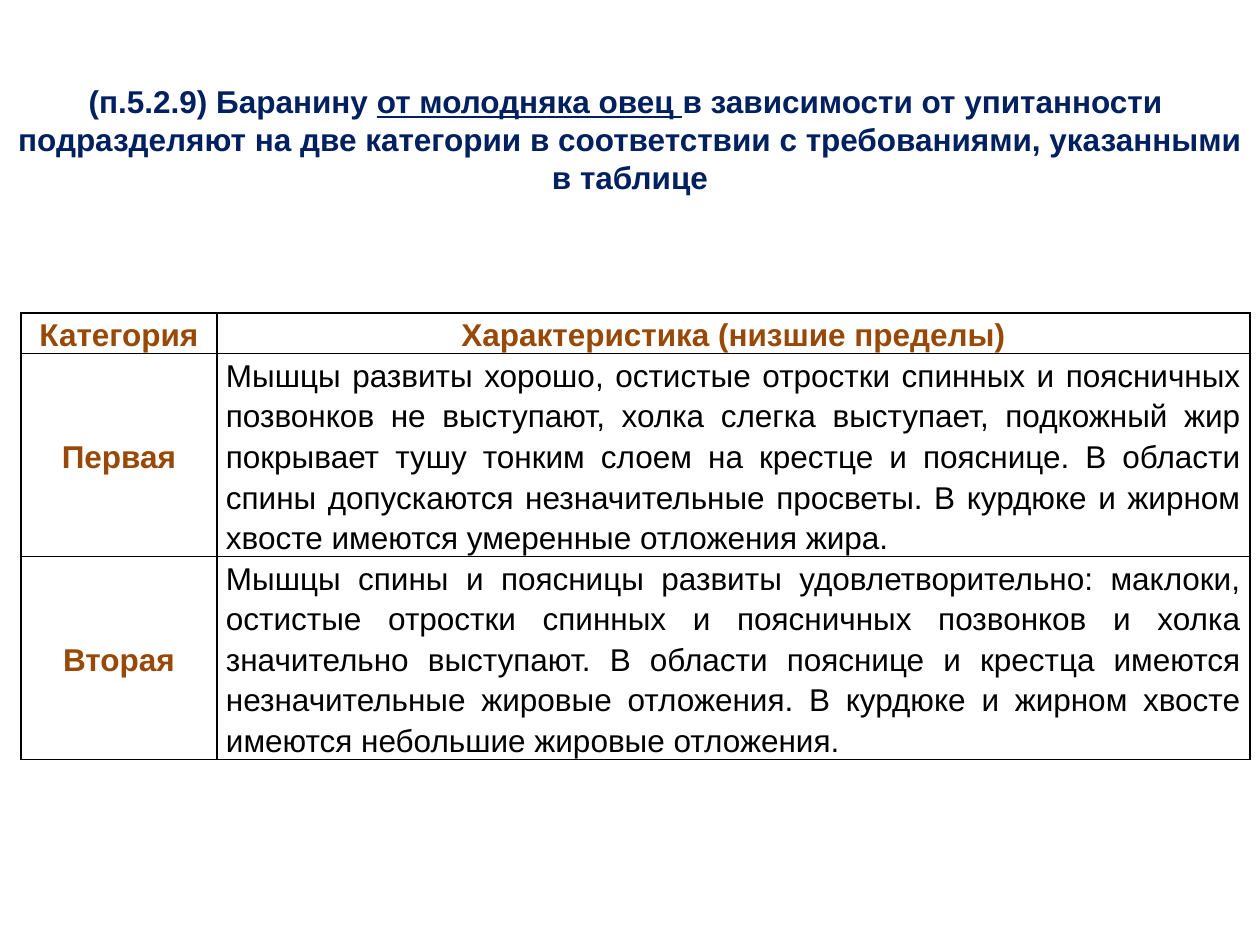
"""Builds a slide with the fatness categories of lamb in one table."""
import pptx
import pptx.dml.color
import pptx.enum.text
import pptx.oxml
import pptx.oxml.ns
import pptx.util

PX = 914400 // 126
NAVY, BROWN, BLACK = "002060", "984807", "000000"
ALIGN = pptx.enum.text.PP_ALIGN
ANCHOR = pptx.enum.text.MSO_ANCHOR

TITLE = [
    [("(п.5.2.9) Баранину ", False), ("от молодняка овец ", True),
     ("в зависимости от упитанности ", False)],
    [("подразделяют на две категории в соответствии с требованиями, указанными в таблице", False)],
]
TITLE_BOX = (0, 76, 1260, 165)

ROWS = [
    ("Категория", "Характеристика (низшие пределы)"),
    ("Первая",
     "Мышцы развиты хорошо, остистые отростки спинных и поясничных позвонков не выступают, "
     "холка слегка выступает, подкожный жир покрывает тушу тонким слоем на крестце и пояснице. "
     "В области спины допускаются незначительные просветы. "
     "В курдюке и жирном хвосте имеются умеренные отложения жира."),
    ("Вторая",
     "Мышцы спины и поясницы развиты удовлетворительно: маклоки, остистые отростки спинных и "
     "поясничных позвонков и холка значительно выступают. В области пояснице и крестца имеются "
     "незначительные жировые отложения. "
     "В курдюке и жирном хвосте имеются небольшие жировые отложения."),
]
TABLE_LEFT, TABLE_TOP = 21, 313
COL_WIDTHS = (196, 1033)
ROW_HEIGHTS = (40, 203, 203)


def px(n):
    return pptx.util.Emu(n * PX)


def rgb(color):
    return pptx.dml.color.RGBColor.from_string(color)


def add_run(p, text, color, bold, underline=False):
    r = p.add_run()
    r.text = text
    r.font.name = "Arial"
    r.font.size = pptx.util.Pt(18)
    r.font.bold = bold
    r.font.underline = underline
    r.font.color.rgb = rgb(color)


def set_borders(cell):
    tcPr = cell._tc.get_or_add_tcPr()
    for i, side in enumerate(("lnL", "lnR", "lnT", "lnB")):
        tcPr.insert(i, pptx.oxml.parse_xml(
            f'<a:{side} {pptx.oxml.ns.nsdecls("a")} w="12700"><a:solidFill>'
            f'<a:srgbClr val="{BLACK}"/></a:solidFill></a:{side}>'))


def add_title(slide):
    sp = slide.shapes.title
    sp.left, sp.top, sp.width, sp.height = map(px, TITLE_BOX)
    tf = sp.text_frame
    tf.word_wrap = True
    tf.auto_size = pptx.enum.text.MSO_AUTO_SIZE.NONE
    tf.vertical_anchor = ANCHOR.TOP
    for i, runs in enumerate(TITLE):
        p = tf.add_paragraph() if i else tf.paragraphs[0]
        p.alignment = ALIGN.CENTER
        for text, underline in runs:
            add_run(p, text, NAVY, True, underline)


def fill_cell(cell, text, is_label, is_middle):
    cell.margin_left = cell.margin_right = px(9)
    cell.margin_top = cell.margin_bottom = 0
    cell.vertical_anchor = ANCHOR.MIDDLE if is_middle else ANCHOR.TOP
    cell.fill.background()
    set_borders(cell)
    p = cell.text_frame.paragraphs[0]
    p.alignment = ALIGN.CENTER if is_label else ALIGN.JUSTIFY
    p.line_spacing = 1.15
    add_run(p, text, BROWN if is_label else BLACK, is_label)


def add_categories(slide):
    table = slide.shapes.add_table(
        len(ROWS), len(COL_WIDTHS), px(TABLE_LEFT), px(TABLE_TOP),
        px(sum(COL_WIDTHS)), px(sum(ROW_HEIGHTS))).table
    table.horz_banding = False
    for col, width in zip(table.columns, COL_WIDTHS):
        col.width = px(width)
    for i, (height, texts) in enumerate(zip(ROW_HEIGHTS, ROWS)):
        table.rows[i].height = px(height)
        for j, text in enumerate(texts):
            fill_cell(table.cell(i, j), text, i == 0 or j == 0, i > 0 and j == 0)


def main():
    prs = pptx.Presentation()
    prs.slide_width, prs.slide_height = px(1260), px(945)
    slide = prs.slides.add_slide(prs.slide_layouts[5])
    add_title(slide)
    add_categories(slide)
    prs.save("out.pptx")


if __name__ == "__main__":
    main()
